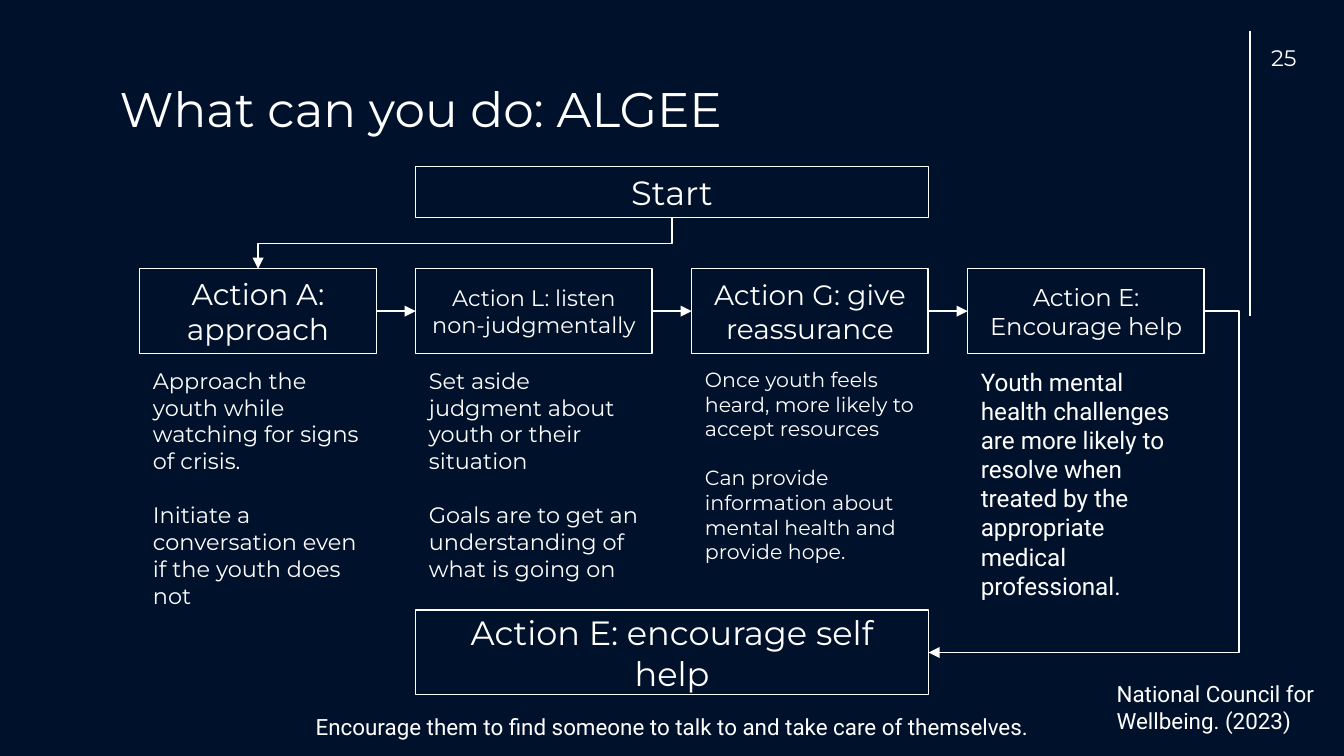
from lxml import etree
from pptx import Presentation
from pptx.dml.color import RGBColor
from pptx.enum import shapes, text
from pptx.oxml import ns
from pptx.util import Inches, Pt

NAVY = RGBColor(0x00, 0x12, 0x2B)
WHITE = RGBColor(0xFF, 0xFF, 0xFF)
HEADING_FONT, BODY_FONT = "Montserrat", "Roboto"

TITLE = "What can you do: ALGEE"
# heading, heading size, details, details size, details font
ACTIONS = [
    ("Action A: approach", 16,
     ["Approach the youth while watching for signs of crisis.",
      "Initiate a conversation even if the youth does not"], 12, HEADING_FONT),
    ("Action L: listen non-judgmentally", 12,
     ["Set aside judgment about youth or their situation",
      "Goals are to get an understanding of what is going on"], 12, HEADING_FONT),
    ("Action G: give reassurance", 15,
     ["Once youth feels heard, more likely to accept resources",
      "Can provide information about mental health and provide hope."], 11, HEADING_FONT),
    ("Action E: Encourage help", 13,
     ["Youth mental health challenges are more likely to resolve when treated "
      "by the appropriate medical professional."], 13, BODY_FONT),
]
# text, left, top, width, height, font
NOTES = [
    ("25", 9.36, 0.23, 0.6, 0.35, HEADING_FONT),
    ("Encourage them to find someone to talk to and take care of themselves.",
     2.25, 5.21, 5.55, 0.35, BODY_FONT),
    ("National Council for Wellbeing. (2023)", 8.21, 4.96, 1.88, 0.61, BODY_FONT),
]

FIRST_LEFT, LAST_LEFT = 1.04, 7.2
STEP = (LAST_LEFT - FIRST_LEFT) / (len(ACTIONS) - 1)
ACTION_TOP, ACTION_WIDTH, ACTION_HEIGHT = 2.0, 1.76, 0.63
WIDE_LEFT, WIDE_WIDTH = 3.09, 3.82
START_TOP, START_HEIGHT = 1.24, 0.38
SELF_HELP_TOP = 4.54
RETURN_X = 9.22
MARGIN, STEP_MARGIN = 0.1, 0.11

prs = Presentation()
prs.slide_width = Inches(10)
prs.slide_height = prs.slide_width * 9 // 16
slide = prs.slides.add_slide(prs.slide_layouts[5])
slide.background.fill.solid()
slide.background.fill.fore_color.rgb = NAVY


def write(shape, paragraphs, size, font, align=text.PP_ALIGN.LEFT,
          anchor=text.MSO_ANCHOR.TOP, side_margin=MARGIN):
    frame = shape.text_frame
    frame.word_wrap = True
    frame.auto_size = text.MSO_AUTO_SIZE.NONE
    frame.vertical_anchor = anchor
    frame.margin_left = frame.margin_right = Inches(side_margin)
    frame.margin_top = frame.margin_bottom = Inches(MARGIN)
    for index, words in enumerate(paragraphs):
        paragraph = frame.add_paragraph() if index else frame.paragraphs[0]
        paragraph.text = words
        paragraph.alignment = align
        paragraph.space_before = Pt(1.2 * size if index else 0)
        for run in paragraph.runs:
            run.font.size, run.font.name = Pt(size), font
            run.font.color.rgb = WHITE


def add_note(paragraphs, left, top, width, height, size, font):
    box = slide.shapes.add_textbox(*map(Inches, (left, top, width, height)))
    write(box, paragraphs, size, font)


def add_step(words, left, top, width, height, size):
    step = slide.shapes.add_shape(shapes.MSO_SHAPE.RECTANGLE,
                                  *map(Inches, (left, top, width, height)))
    step.shadow.inherit = False
    step.fill.background()
    step.line.color.rgb, step.line.width = WHITE, Pt(0.75)
    write(step, [words], size, HEADING_FONT, text.PP_ALIGN.CENTER,
          text.MSO_ANCHOR.MIDDLE, STEP_MARGIN)


def add_line(start, end, kind=shapes.MSO_CONNECTOR.STRAIGHT, arrow=True):
    line = slide.shapes.add_connector(kind, *map(Inches, (*start, *end)))
    line.line.color.rgb, line.line.width = WHITE, Pt(0.75)
    properties = line._element.spPr
    if arrow:
        etree.SubElement(properties.find(ns.qn("a:ln")), ns.qn("a:tailEnd"),
                         type="triangle")
    etree.SubElement(properties, ns.qn("a:effectLst"))
    return line


def add_drop(start, end):
    """Add an elbow arrow that leaves downwards: a horizontal one turned by 90 degrees."""
    middle_x, middle_y = (start[0] + end[0]) / 2, (start[1] + end[1]) / 2
    half_run, half_drop = abs(end[0] - start[0]) / 2, (end[1] - start[1]) / 2
    drop = add_line((middle_x - half_drop, middle_y - half_run),
                    (middle_x + half_drop, middle_y + half_run),
                    shapes.MSO_CONNECTOR.ELBOW)
    drop._element.spPr.find(ns.qn("a:xfrm")).set("rot", str(90 * 60000))


title = slide.shapes.title
title.left, title.top = Inches(0.79), Inches(0.49)
title.width, title.height = Inches(8.43), Inches(0.63)
write(title, [TITLE], 26, HEADING_FONT)

add_line((9.3, 0.23), (9.3, 2.35), arrow=False)
add_step("Start", WIDE_LEFT, START_TOP, WIDE_WIDTH, START_HEIGHT, 18)
add_step("Action E: encourage self help", WIDE_LEFT, SELF_HELP_TOP, WIDE_WIDTH,
         ACTION_HEIGHT, 18)

action_middle = ACTION_TOP + ACTION_HEIGHT / 2
for column, (heading, heading_size, details, size, font) in enumerate(ACTIONS):
    left = FIRST_LEFT + column * STEP
    add_step(heading, left, ACTION_TOP, ACTION_WIDTH, ACTION_HEIGHT, heading_size)
    add_note(details, left, ACTION_TOP + ACTION_HEIGHT, ACTION_WIDTH, 1.7, size, font)
    if column:
        add_line((left - STEP + ACTION_WIDTH, action_middle), (left, action_middle))

add_drop((WIDE_LEFT + WIDE_WIDTH / 2, START_TOP + START_HEIGHT),
         (FIRST_LEFT + ACTION_WIDTH / 2, ACTION_TOP))

last_right = LAST_LEFT + ACTION_WIDTH
wide_right = WIDE_LEFT + WIDE_WIDTH
back = add_line((last_right, action_middle),
                (wide_right, SELF_HELP_TOP + ACTION_HEIGHT / 2),
                shapes.MSO_CONNECTOR.ELBOW)
bend = (last_right - RETURN_X) / (last_right - wide_right)
guides = back._element.spPr.find(ns.qn("a:prstGeom")).get_or_add_avLst()
etree.SubElement(guides, ns.qn("a:gd"), name="adj1", fmla=f"val {round(bend * 100000)}")

for words, left, top, width, height, font in NOTES:
    add_note([words], left, top, width, height, 12, font)

prs.save("out.pptx")
